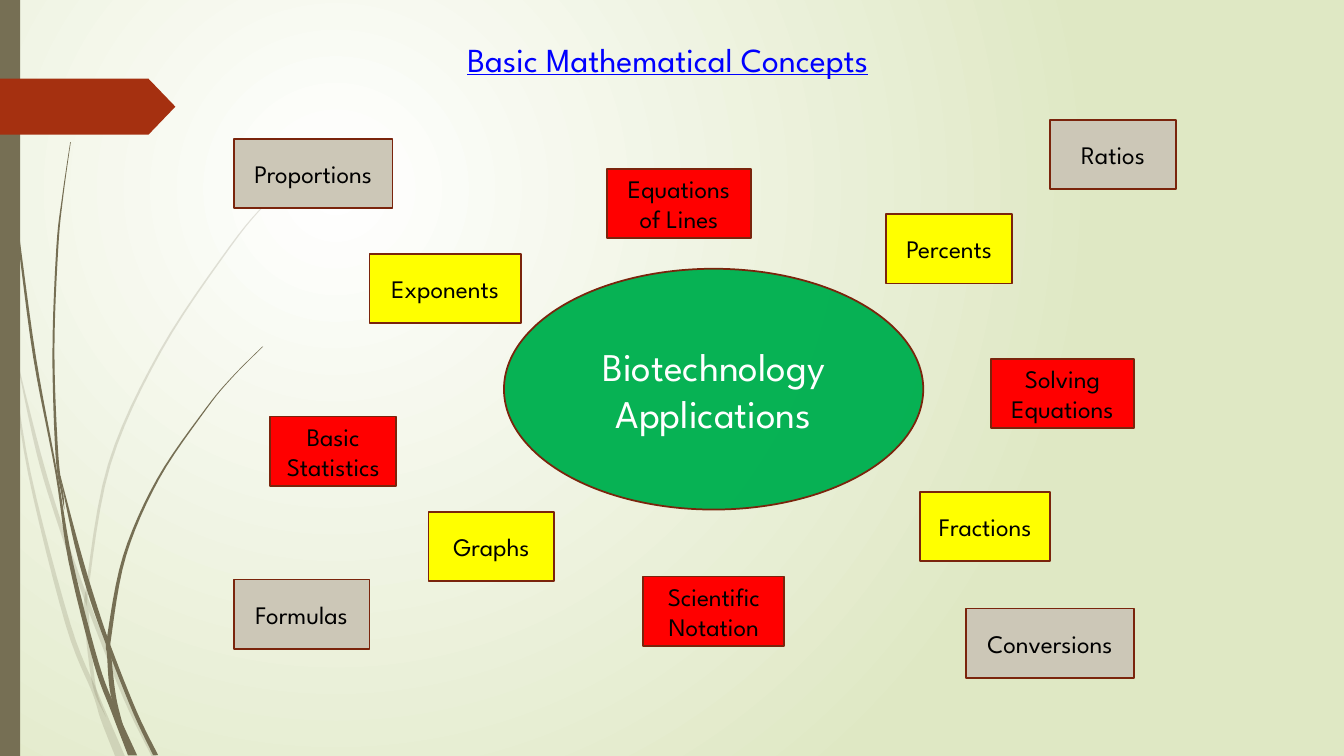
from lxml import etree
from pptx import Presentation
from pptx.dml.color import RGBColor
from pptx.enum.shapes import MSO_SHAPE as Shape
from pptx.enum.text import MSO_ANCHOR as Anchor, PP_ALIGN as Align
from pptx.oxml.ns import qn
from pptx.util import Pt

BLACK = RGBColor(0x00, 0x00, 0x00)
WHITE = RGBColor(0xFF, 0xFF, 0xFF)
PALE_GREEN = RGBColor(0xDF, 0xE8, 0xC4)
OLIVE = RGBColor(0x76, 0x6F, 0x54)
RUST = RGBColor(0xA5, 0x30, 0x10)
MAROON = RGBColor(0x7A, 0x24, 0x0C)
BLUE = RGBColor(0x00, 0x00, 0xFF)
GREEN = RGBColor(0x00, 0xB0, 0x50)
RED = RGBColor(0xFF, 0x00, 0x00)
YELLOW = RGBColor(0xFF, 0xFF, 0x00)
STONE = RGBColor(0xCC, 0xC7, 0xB7)
FONT = "League Spartan"


def write(box, text, size=18, color=BLACK, underline=None, anchor=Anchor.MIDDLE):
    frame = box.text_frame
    frame.word_wrap = True
    frame.vertical_anchor = anchor
    frame.text = text
    for para in frame.paragraphs:
        para.alignment = Align.CENTER
        for span in para.runs:
            span.font.name = FONT
            span.font.size = Pt(size)
            span.font.color.rgb = color
            span.font.underline = underline


def paint(shape, color, outline=None, opacity=100):
    shape.shadow.inherit = False
    shape.fill.solid()
    shape.fill.fore_color.rgb = color
    if opacity < 100:
        tint = shape.fill._xPr.find(qn("a:solidFill"))[0]
        etree.SubElement(tint, qn("a:alpha")).set("val", str(opacity * 1000))
    if outline is None:
        shape.line.fill.background()
    else:
        shape.line.color.rgb = outline
        shape.line.width = Pt(1.25)


deck = Presentation()
deck.slide_width, deck.slide_height = Pt(960), Pt(540)
page = deck.slides.add_slide(deck.slide_layouts[6])

# Background: radial glow from white to pale green
backdrop = page.background.fill
backdrop.gradient()
for stop, color in zip(backdrop.gradient_stops, (WHITE, PALE_GREEN)):
    stop.color.rgb = color
gradient = page.background._cSld.find(".//" + qn("a:gradFill"))
gradient.remove(gradient.find(qn("a:lin")))
glow = etree.SubElement(gradient, qn("a:path"), path="circle")
etree.SubElement(glow, qn("a:fillToRect"), l="50000", t="50000", r="100000", b="100000")

# Grass blades: opacity, then (x, y, width) along each blade
blades = [
    (20, [(0, 209, 2), (7, 248, 1), (21, 338, 2), (48.6, 446, 3.6),
          (68, 495, 4), (75, 514, 6), (85.7, 540, 7)]),
    (20, [(10, 248, 0), (27.4, 323, 3), (43, 375, 3), (62, 429, 3),
          (90, 499, 3.6), (110, 540, 3.6)]),
    (20, [(224.6, 110.5, 0.6), (193, 142, 0.8), (164.5, 176, 1.2), (114.5, 251, 1.6),
          (78, 332, 2), (62.3, 420.5, 2), (62, 439, 3), (64, 465, 3),
          (68, 493, 2), (75.6, 512, 0)]),
    (100, [(13, 168, 1.4), (24.8, 255.6, 2), (40.3, 338, 1.4), (50.4, 400.7, 3),
           (68.8, 473.8, 3.6), (81.4, 507.6, 4.3), (94.7, 539.5, 6.5)]),
    (100, [(43, 340, 0.4), (54.7, 389, 3), (65.2, 425.5, 3.6), (77.8, 462, 3),
           (96.5, 509, 3), (111.2, 539.5, 3.6)]),
    (100, [(50.4, 101.5, 0.4), (45, 139, 0.8), (41, 176.4, 1.4), (38.2, 251, 1.4),
           (40.7, 325, 2), (44.6, 353, 1.4), (46, 364, 0)]),
    (100, [(187.6, 247.7, 0.6), (166.3, 269, 0.7), (147.2, 292, 1), (113, 342, 1.6),
           (89, 397, 2.2), (78, 455, 3), (78, 468, 3), (81, 497, 3.6), (87.8, 518, 0)]),
]
STEPS = 6
for opacity, knots in blades:
    # Smooth each blade with a Catmull-Rom curve
    padded = [knots[0], *knots, knots[-1]]
    curve = []
    for quad in zip(padded, padded[1:], padded[2:], padded[3:]):
        for step in range(STEPS):
            t = step / STEPS
            curve.append([b + t * (c - a) / 2 + t**2 * (2*a - 5*b + 4*c - d) / 2
                          + t**3 * (3*b - a - 3*c + d) / 2
                          for a, b, c, d in zip(*quad)])
    curve.append(knots[-1])
    left = [(Pt(x - width / 2), Pt(y)) for x, y, width in curve]
    right = [(Pt(x + width / 2), Pt(y)) for x, y, width in curve]
    outline = left + right[::-1]
    builder = page.shapes.build_freeform(*outline[0], scale=1.0)
    builder.add_line_segments(outline[1:], close=True)
    paint(builder.convert_to_shape(), OLIVE, opacity=opacity)

# Side bar and arrow tab
bar = page.shapes.add_shape(Shape.RECTANGLE, Pt(0), Pt(0), Pt(14.4), Pt(540))
paint(bar, OLIVE)
tab = page.shapes.add_shape(Shape.PENTAGON, Pt(0), Pt(56.2), Pt(125.3), Pt(40))
tab.adjustments[0] = 0.48
paint(tab, RUST)

# Title
title = page.shapes.add_textbox(Pt(144), Pt(24), Pt(666), Pt(126))
write(title, "Basic Mathematical Concepts", size=24, color=BLUE,
      underline=True, anchor=Anchor.TOP)

# Central topic
hub = page.shapes.add_shape(Shape.OVAL, Pt(360), Pt(192), Pt(299.5), Pt(172))
paint(hub, GREEN, outline=MAROON, opacity=97)
write(hub, "Biotechnology\nApplications", size=28, color=WHITE)

# Concepts around it: text, fill, left, top, width
concepts = [
    ("Equations of Lines", RED, 433.5, 120.6, 103),
    ("Exponents", YELLOW, 264, 181.5, 108),
    ("Graphs", YELLOW, 306, 365.5, 90),
    ("Fractions", YELLOW, 657.2, 351.2, 93),
    ("Percents", YELLOW, 633, 153, 90),
    ("Proportions", STONE, 167, 99.2, 113.5),
    ("Ratios", STONE, 750, 85.7, 90),
    ("Basic Statistics", RED, 193, 297.6, 90),
    ("Solving Equations", RED, 707.8, 256.2, 102.2),
    ("Conversions", STONE, 690, 434.7, 120),
    ("Scientific Notation", RED, 459.5, 411.8, 100.8),
    ("Formulas", STONE, 167, 414, 97),
]
for text, color, left, top, width in concepts:
    box = page.shapes.add_shape(Shape.RECTANGLE, Pt(left), Pt(top), Pt(width), Pt(49.5))
    paint(box, color, outline=MAROON)
    write(box, text)

deck.save("out.pptx")
